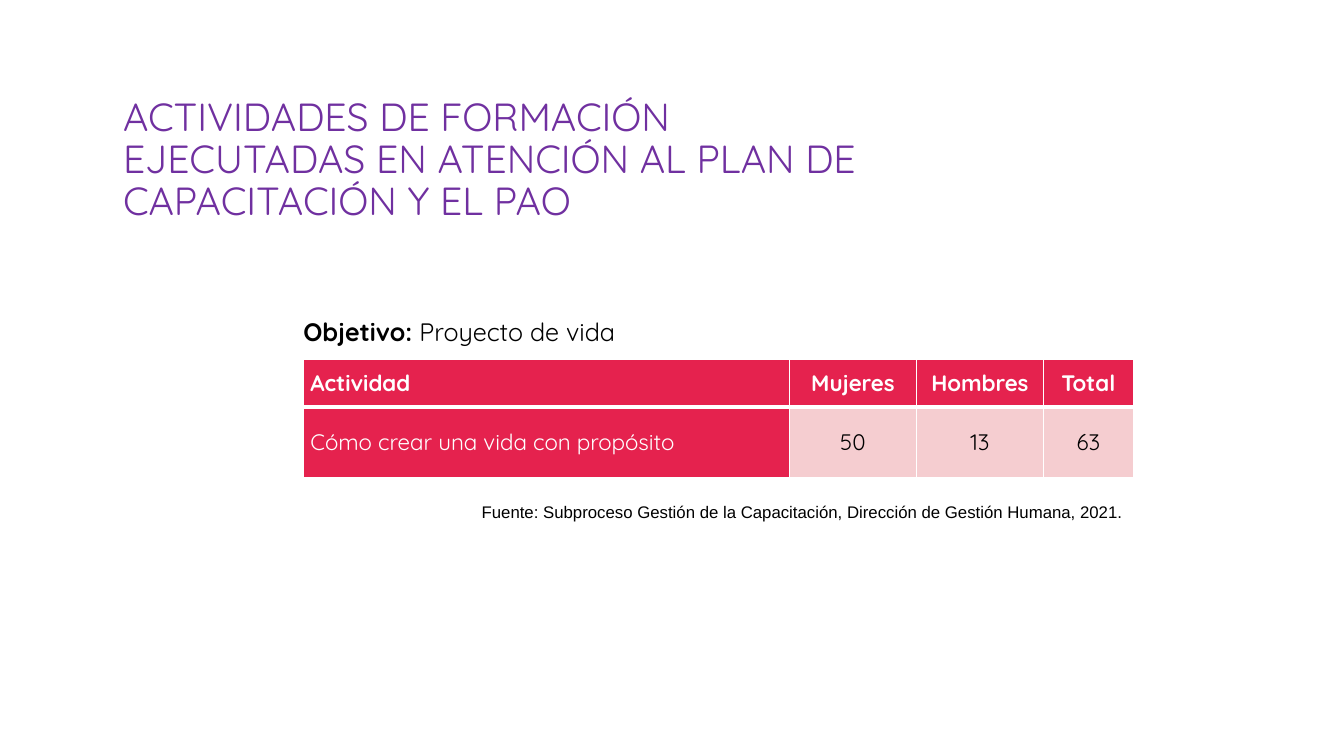
from lxml import etree
from pptx import Presentation, util as u
from pptx.dml.color import RGBColor
from pptx.enum import text
from pptx.oxml import ns

TITLE = "ACTIVIDADES DE FORMACIÓN EJECUTADAS EN ATENCIÓN AL PLAN DE CAPACITACIÓN Y EL PAO"
OBJECTIVE = ("Objetivo: ", "Proyecto de vida")
SOURCE = "Fuente: Subproceso Gestión de la Capacitación, Dirección de Gestión Humana, 2021."
ROWS = [
    ("Actividad", "Mujeres", "Hombres", "Total"),
    ("Cómo crear una vida con propósito", "50", "13", "63"),
]
COLUMN_WIDTHS = (4.82, 1.26, 1.26, 0.89)
ROW_HEIGHTS = (0.47, 0.7)
TABLE_LEFT, TABLE_TOP = 3.01, 3.57
TABLE_WIDTH = sum(COLUMN_WIDTHS)
TABLE_RIGHT = TABLE_LEFT + TABLE_WIDTH
INSET = 0.1

PURPLE, RED, PINK = "7030A0", "E5224E", "F5CDD0"
BLACK, WHITE = "000000", "FFFFFF"


def color(value):
    return RGBColor.from_string(value)


def style(paragraph, size, value, name="Quicksand", bold=False):
    font = paragraph.font
    font.size, font.name, font.bold = u.Pt(size), name, bold
    font.color.rgb = color(value)


def place(shape, left, top, width, height):
    shape.left, shape.top = u.Inches(left), u.Inches(top)
    shape.width, shape.height = u.Inches(width), u.Inches(height)


def add_line_box(page, left, top, width, height):
    """Add a wrapping text box and return its first paragraph."""
    box = page.shapes.add_textbox(*map(u.Inches, (left, top, width, height)))
    box.text_frame.word_wrap = True
    box.text_frame.auto_size = text.MSO_AUTO_SIZE.SHAPE_TO_FIT_TEXT
    return box.text_frame.paragraphs[0]


def set_borders(cell, **points):
    """Draw white cell borders; keys are L, R, T and B."""
    properties = cell._tc.get_or_add_tcPr()
    for index, side in enumerate("LRTB"):
        line = etree.Element(ns.qn(f"a:ln{side}"), w=str(u.Pt(points[side])))
        fill = etree.SubElement(line, ns.qn("a:solidFill"))
        etree.SubElement(fill, ns.qn("a:srgbClr"), val=WHITE)
        properties.insert(index, line)


def add_activity_table(page):
    frame = page.shapes.add_table(
        len(ROWS), len(COLUMN_WIDTHS),
        *map(u.Inches, (TABLE_LEFT, TABLE_TOP, TABLE_WIDTH, sum(ROW_HEIGHTS))))
    table = frame.table
    for column, width in zip(table.columns, COLUMN_WIDTHS):
        column.width = u.Inches(width)
    for r, (labels, height) in enumerate(zip(ROWS, ROW_HEIGHTS)):
        table.rows[r].height = u.Inches(height)
        for c, label in enumerate(labels):
            header, number = r == 0, r > 0 and c > 0
            cell = table.cell(r, c)
            cell.text = label
            cell.vertical_anchor = text.MSO_ANCHOR.MIDDLE
            cell.margin_left = cell.margin_right = u.Inches(0.07)
            cell.margin_top = cell.margin_bottom = 0
            cell.fill.solid()
            cell.fill.fore_color.rgb = color(PINK if number else RED)
            set_borders(cell, L=1, R=1, T=1 if header else 3, B=3 if header else 1)
            para = cell.text_frame.paragraphs[0]
            para.alignment = text.PP_ALIGN.CENTER if c else text.PP_ALIGN.LEFT
            style(para, 16, BLACK if number else WHITE, bold=header)


def main():
    deck = Presentation()
    deck.slide_width, deck.slide_height = u.Inches(13.33), u.Inches(7.5)
    page = deck.slides.add_slide(deck.slide_layouts[5])

    title = page.shapes.title
    place(title, 1.12, 0.89, 7.48, 1.41)
    title.text_frame.text = TITLE
    title.text_frame.auto_size = text.MSO_AUTO_SIZE.NONE
    title.text_frame.vertical_anchor = text.MSO_ANCHOR.MIDDLE
    para = title.text_frame.paragraphs[0]
    para.alignment, para.line_spacing = text.PP_ALIGN.LEFT, 0.9
    style(para, 28, PURPLE)

    left = TABLE_LEFT - INSET
    para = add_line_box(page, left, 3.09, 13.33 - left, 0.4)
    for words, bold in zip(OBJECTIVE, (True, False)):
        span = para.add_run()
        span.text, span.font.bold = words, bold
    style(para, 18, BLACK)

    add_activity_table(page)

    para = add_line_box(page, 3.24, 4.93, TABLE_RIGHT - 3.24, 0.3)
    para.text, para.alignment = SOURCE, text.PP_ALIGN.RIGHT
    style(para, 12, BLACK, "Arial")

    deck.save("out.pptx")


if __name__ == "__main__":
    main()
